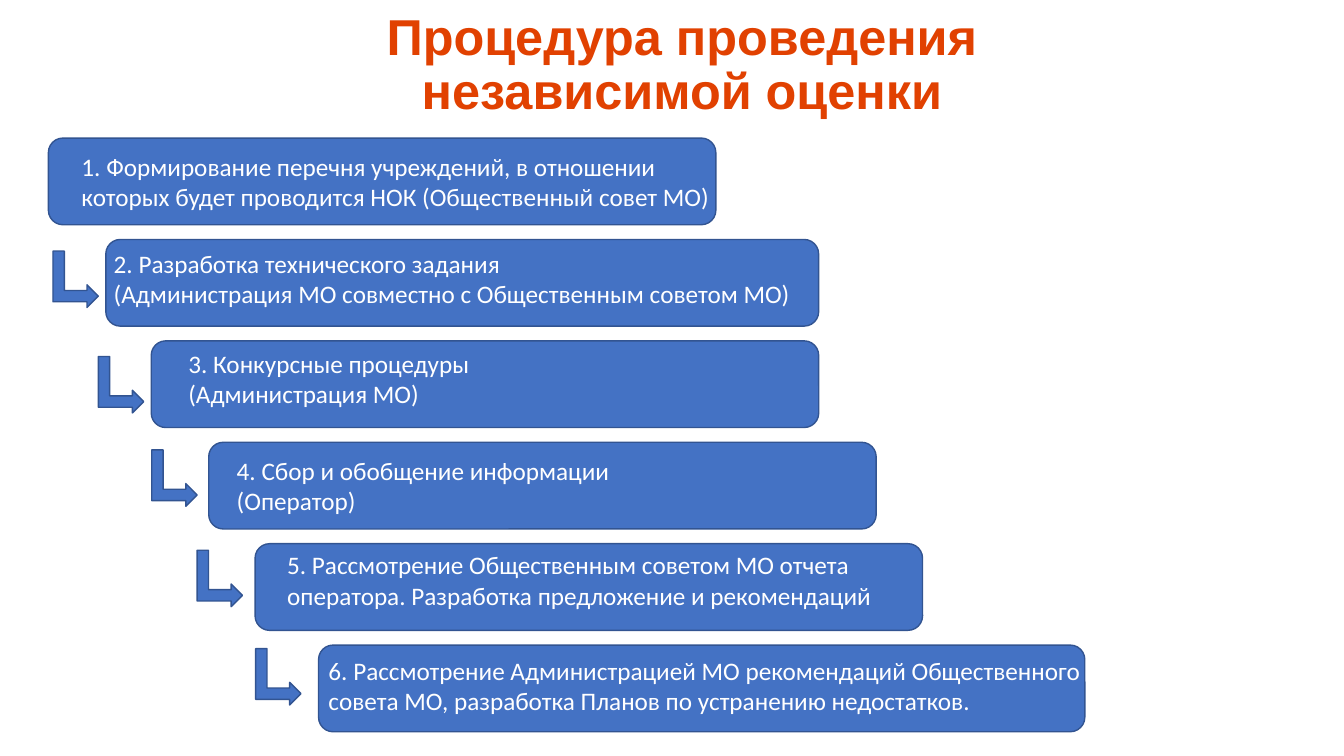
from dataclasses import dataclass

from lxml import etree
from pptx import Presentation, util as u
from pptx.dml.color import RGBColor
from pptx.enum import shapes, text
from pptx.oxml import ns
from pptx.shapes.autoshape import Shape
from pptx.slide import Slide


@dataclass(frozen=True)
class Theme:
    fill: RGBColor = RGBColor(0x44, 0x72, 0xC4)
    edge: RGBColor = RGBColor(0x32, 0x54, 0x91)
    title: RGBColor = RGBColor(0xE1, 0x41, 0x01)
    ink: RGBColor = RGBColor(0xFF, 0xFF, 0xFF)
    head: str = "Arial"
    body: str = "Calibri"
    big: int = 36
    base: int = 18
    line: int = 1
    rim: float = 0.75


@dataclass(frozen=True)
class Box:
    col: float
    row: float
    cols: float
    rows: float


@dataclass(frozen=True)
class Step:
    col: float
    cols: float
    inset: float
    drop: float
    width: float
    words: str
    wrap: bool = True


@dataclass(frozen=True)
class Turn:
    col: float
    drop: float


THEME = Theme()
CELL = u.Inches(0.1)
TOP, PITCH, HIGH = 13.7, 10.06, 8.6
TITLE = Box(20.3, -2.9, 94.7, 18.9)

STEPS = [
    Step(4.8, 66.2, 2.3, 0.8, 65.1,
         "1. Формирование перечня учреждений, в отношении которых будет "
         "проводится НОК (Общественный совет МО)"),
    Step(10.5, 70.7, -0.2, 0.4, 70.4,
         "2. Разработка технического задания\n"
         "(Администрация МО совместно с Общественным советом МО)", False),
    Step(15, 66.2, 2.7, 0.2, 66.7,
         "3. Конкурсные процедуры\n(Администрация МО)"),
    Step(20.7, 66.2, 1.8, 0.8, 66.7,
         "4. Сбор и обобщение информации\n(Оператор)"),
    Step(25.3, 66.2, 2.2, 0.1, 66.7,
         "5. Рассмотрение Общественным советом МО отчета оператора. "
         "Разработка предложение и рекомендаций"),
    Step(31.6, 76, 0, 0.5, 77.3,
         "6. Рассмотрение Администрацией МО рекомендаций Общественного "
         "совета МО, разработка Планов по устранению недостатков."),
]

TURNS = [Turn(4.7, 1.7), Turn(9.2, 2.1), Turn(14.5, 1.3),
         Turn(19, 1.2), Turn(24.8, 0.9)]


def place(box: Box) -> list[int]:
    return [round(n * CELL) for n in (box.col, box.row, box.cols, box.rows)]


def draw(slide: Slide, kind: shapes.MSO_SHAPE, box: Box) -> Shape:
    shape = slide.shapes.add_shape(kind, *place(box))
    shape.shadow.inherit = False
    shape.fill.solid()
    shape.fill.fore_color.rgb = THEME.fill
    shape.line.color.rgb = THEME.edge
    shape.line.width = u.Pt(THEME.line)
    return shape


def write(slide: Slide, box: Box, words: str, face: str, size: int,
          ink: RGBColor, wrap: bool = True) -> Shape:
    label = slide.shapes.add_textbox(*place(box))
    frame = label.text_frame
    frame.word_wrap = wrap
    frame.text = words
    for para in frame.paragraphs:
        for run in para.runs:
            run.font.name = face
            run.font.size = u.Pt(size)
            run.font.color.rgb = ink
    return label


def add_title(slide: Slide) -> None:
    label = write(slide, TITLE, "Процедура проведения независимой оценки",
                  THEME.head, THEME.big, THEME.title)
    frame = label.text_frame
    frame.vertical_anchor = text.MSO_ANCHOR.MIDDLE
    para = frame.paragraphs[0]
    para.alignment = text.PP_ALIGN.CENTER
    para.line_spacing = 0.9
    font = para.runs[0].font
    font.bold = True
    line = etree.Element(ns.qn("a:ln"), w=str(u.Pt(THEME.rim)))
    solid = etree.SubElement(line, ns.qn("a:solidFill"))
    etree.SubElement(solid, ns.qn("a:srgbClr"), val=str(THEME.ink))
    para.runs[0]._r.get_or_add_rPr().insert(0, line)


def add_step(slide: Slide, step: Step, row: float) -> None:
    draw(slide, shapes.MSO_SHAPE.ROUNDED_RECTANGLE,
         Box(step.col, row, step.cols, HIGH))
    box = Box(step.col + step.inset, row + step.drop, step.width, 7.1)
    label = write(slide, box, step.words, THEME.body, THEME.base,
                  THEME.ink, step.wrap)
    label.text_frame.auto_size = text.MSO_AUTO_SIZE.SHAPE_TO_FIT_TEXT


def add_turn(slide: Slide, turn: Turn, row: float) -> None:
    arrow = draw(slide, shapes.MSO_SHAPE.BENT_UP_ARROW,
                 Box(turn.col, row + turn.drop, 5.6, 4.5))
    arrow.rotation = 90


def main() -> None:
    deck = Presentation()
    deck.slide_width = u.Inches(13.33)
    deck.slide_height = u.Inches(7.5)
    slide = deck.slides.add_slide(deck.slide_layouts[6])
    add_title(slide)
    rows = [TOP + PITCH * n for n in range(len(STEPS))]
    for step, row in zip(STEPS, rows):
        add_step(slide, step, row)
    for turn, row in zip(TURNS, rows[1:]):
        add_turn(slide, turn, row)
    deck.save("out.pptx")


if __name__ == "__main__":
    main()
